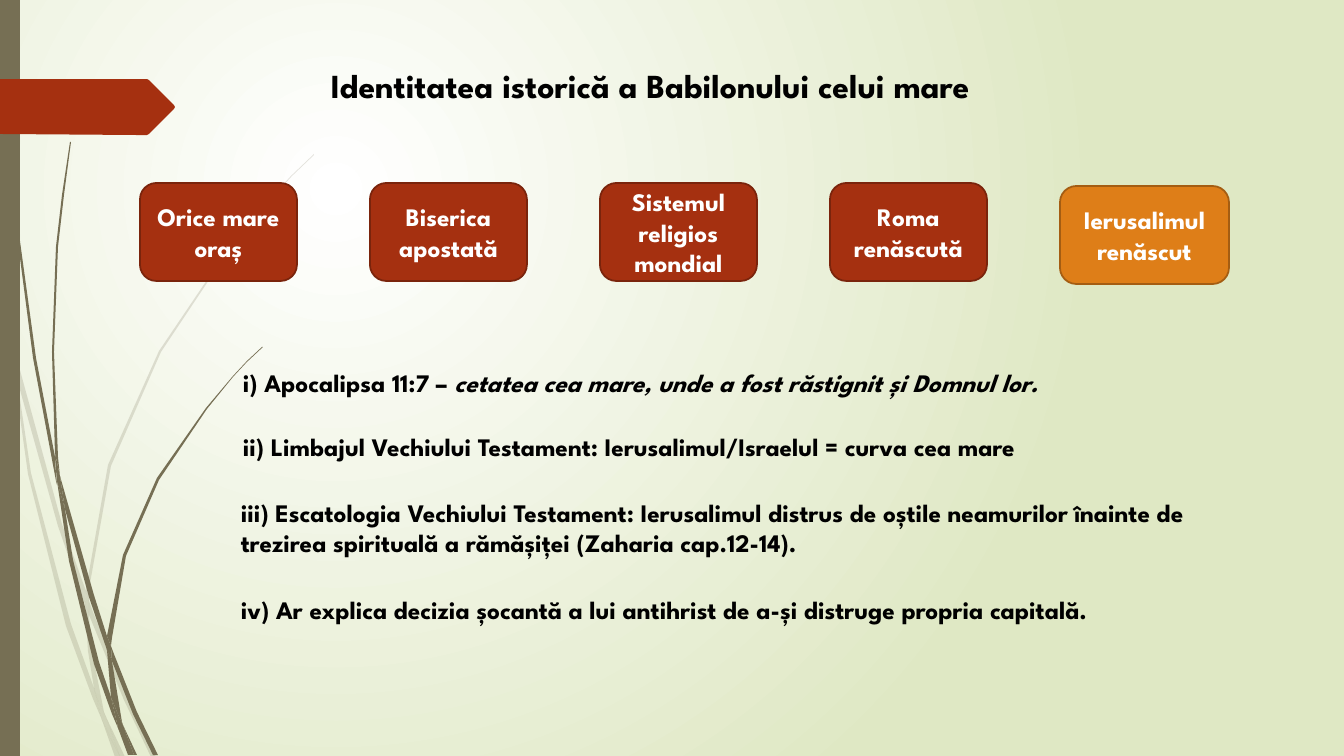
from pptx import Presentation
from pptx.dml.color import RGBColor
from pptx.enum.shapes import MSO_SHAPE
from pptx.enum.text import MSO_ANCHOR, MSO_AUTO_SIZE, PP_ALIGN
from pptx.oxml import parse_xml
from pptx.oxml.ns import nsdecls, qn
from pptx.util import Pt

RECTANGLE = MSO_SHAPE.RECTANGLE
ROUNDED = MSO_SHAPE.ROUNDED_RECTANGLE
MIDDLE = MSO_ANCHOR.MIDDLE
GROW = MSO_AUTO_SIZE.SHAPE_TO_FIT_TEXT
CENTER = PP_ALIGN.CENTER
PX = 914400 / 100.8
FONT = "League Spartan"
COLORS = {
    "white": "FFFFFF",
    "pale_green": "DFE8C4",
    "olive": "766F54",
    "red": "A53010",
    "red_edge": "7A240C",
    "orange": "DE7E18",
    "orange_edge": "A45D12",
    "black": "000000",
}


def paint(shape, fill, edge=None):
    shape.shadow.inherit = False
    shape.fill.solid()
    shape.fill.fore_color.rgb = RGBColor.from_string(COLORS[fill])
    if edge:
        shape.line.color.rgb = RGBColor.from_string(COLORS[edge])
        shape.line.width = Pt(1.25)
    else:
        shape.line.fill.background()


def write(paragraph, text, color, size=18, italic=False):
    run = paragraph.add_run()
    run.text = text
    styles = {"name": FONT, "size": Pt(size), "bold": True, "italic": italic}
    for key, value in styles.items():
        setattr(run.font, key, value)
    run.font.color.rgb = RGBColor.from_string(COLORS[color])


deck = Presentation()
deck.slide_width = round(1344 * PX)
deck.slide_height = round(756 * PX)
slide = deck.slides.add_slide(deck.slide_layouts[6])
shapes = slide.shapes

backdrop = slide.background.fill
backdrop.gradient()
for stop, color in zip(backdrop.gradient_stops, ("white", "pale_green")):
    stop.color.rgb = RGBColor.from_string(COLORS[color])
for direction in list(slide.element.iter(qn("a:lin"))):
    direction.getparent().replace(direction, parse_xml(
        f'<a:path {nsdecls("a")} path="circle">'
        '<a:fillToRect l="50000" t="50000" r="100000" b="100000"/></a:path>'))

faded_grass = [
    [(11, 353), (9, 325), (0, 284), (0, 301), (10, 347)],
    [(58, 526), (85, 604), (86, 591), (62, 524), (14, 348), (17, 379)],
    [(93, 612), (89, 601), (89, 615), (124, 700), (151, 757), (156, 757),
     (128, 698)],
    [(120, 757), (125, 757), (106, 717)],
    [(94, 688), (71, 624), (31, 473), (17, 379), (11, 353), (28, 474),
     (66, 626), (93, 699), (102, 720), (100, 713)],
    [(85, 604), (88, 651), (94, 688), (97, 698), (106, 717), (104, 712),
     (92, 651), (89, 615), (89, 613)],
    [(89, 589), (111, 466), (161, 352), (231, 247), (270, 200), (292, 176),
     (314, 155), (314, 154), (291, 176), (270, 199), (230, 246), (159, 351),
     (108, 465), (86, 589), (86, 591), (89, 601)],
    [(102, 720), (115, 757), (120, 757)],
    [(89, 613), (89, 615), (89, 601), (86, 591), (85, 604)],
    [(97, 698), (94, 688), (100, 713), (102, 720), (120, 757), (106, 717)],
]
solid_grass = [
    [(7, 111), (17, 235), (33, 358), (56, 481), (57, 485), (55, 461),
     (55, 457), (36, 358), (19, 234), (8, 110), (5, 48), (4, 0), (3, 0),
     (4, 48)],
    [(89, 597), (107, 650), (107, 638), (107, 636), (94, 595), (60, 476),
     (65, 509)],
    [(114, 654), (111, 646), (112, 661), (133, 714), (153, 755), (158, 755),
     (137, 712)],
    [(111, 697), (99, 662), (73, 560), (65, 509), (57, 481), (69, 561),
     (94, 664), (112, 714), (118, 728), (117, 723)],
    [(60, 476), (58, 457), (54, 352), (58, 247), (64, 195), (71, 142),
     (70, 142), (62, 195), (56, 247), (52, 352), (55, 453)],
    [(134, 755), (137, 755), (123, 725)],
    [(57, 481), (65, 509), (60, 476), (55, 453), (55, 457)],
    [(112, 638), (126, 556), (159, 480), (207, 409), (233, 377), (247, 362),
     (263, 347), (262, 347), (247, 361), (233, 376), (206, 408), (157, 478),
     (123, 555), (107, 636), (111, 646)],
    [(118, 728), (128, 755), (132, 755)],
    [(107, 650), (111, 697), (117, 712), (123, 725), (122, 722), (112, 661),
     (110, 656)],
    [(107, 650), (110, 656), (112, 661), (111, 646), (107, 636), (107, 638)],
    [(117, 712), (111, 697), (117, 723), (118, 728), (131, 755), (134, 755),
     (123, 725)],
]
side_bar = [(0, 0), (20, 0), (20, 756), (0, 756)]
arrow_tag = [(174, 109), (149, 134), (147, 135), (137, 135), (0, 134), (0, 79),
             (137, 79), (147, 79), (149, 80), (174, 105), (175, 107)]

for grass, opacity in ((faded_grass, 20), (solid_grass, 100)):
    tuft = shapes.add_group_shape()
    for outline in grass:
        builder = tuft.shapes.build_freeform(*outline[0], scale=PX)
        builder.add_line_segments(outline[1:], close=True)
        blade = builder.convert_to_shape()
        paint(blade, "olive")
        if opacity < 100:
            tint = next(blade.element.spPr.iter(qn("a:srgbClr")))
            tint.append(parse_xml(
                f'<a:alpha {nsdecls("a")} val="{opacity * 1000}"/>'))

side_bar = shapes.add_shape(RECTANGLE, 0, 0, round(20 * PX), round(756 * PX))
paint(side_bar, "olive")
tag_builder = shapes.build_freeform(*arrow_tag[0], scale=PX)
tag_builder.add_line_segments(arrow_tag[1:], close=True)
paint(tag_builder.convert_to_shape(), "red")

answers = [
    ("Orice mare oraș", 183, 157, "red"),
    ("Biserica apostată", 183, 157, "red"),
    ("Sistemul religios mondial", 183, 157, "red"),
    ("Roma renăscută", 183, 157, "red"),
    ("Ierusalimul renăscut", 186, 169, "orange"),
]
for i, (answer, top, width, color) in enumerate(answers):
    box = (140 + 230 * i, top, width, 98)
    card = shapes.add_shape(ROUNDED, *(round(v * PX) for v in box))
    paint(card, color, color + "_edge")
    card.text_frame.vertical_anchor = MIDDLE
    card.text_frame.paragraphs[0].alignment = CENTER
    write(card.text_frame.paragraphs[0], answer, "white")

statements = [
    ((312, 60, 862, 50), 24,
     [(" Identitatea istorică a Babilonului celui mare", False)]),
    ((233, 426, 896, 40), 18,
     [("ii) Limbajul Vechiului Testament: Ierusalimul/Israelul = curva cea mare",
       False)]),
    ((231, 492, 976, 72), 18,
     [("iii) Escatologia Vechiului Testament: Ierusalimul distrus de oștile "
       "neamurilor înainte de trezirea spirituală a rămășiței "
       "(Zaharia cap.12-14).", False)]),
    ((231, 589, 960, 40), 18,
     [("iv) Ar explica decizia șocantă a lui antihrist de a-și distruge "
       "propria capitală.", False)]),
    ((233, 362, 921, 40), 18,
     [("i) Apocalipsa 11:7 – ", False),
      ("cetatea cea mare, unde a fost răstignit și Domnul lor.", True)]),
]
for box, size, parts in statements:
    statement = shapes.add_textbox(*(round(v * PX) for v in box)).text_frame
    statement.word_wrap = True
    statement.auto_size = GROW
    for text, italic in parts:
        write(statement.paragraphs[0], text, "black", size, italic)

deck.save("out.pptx")
